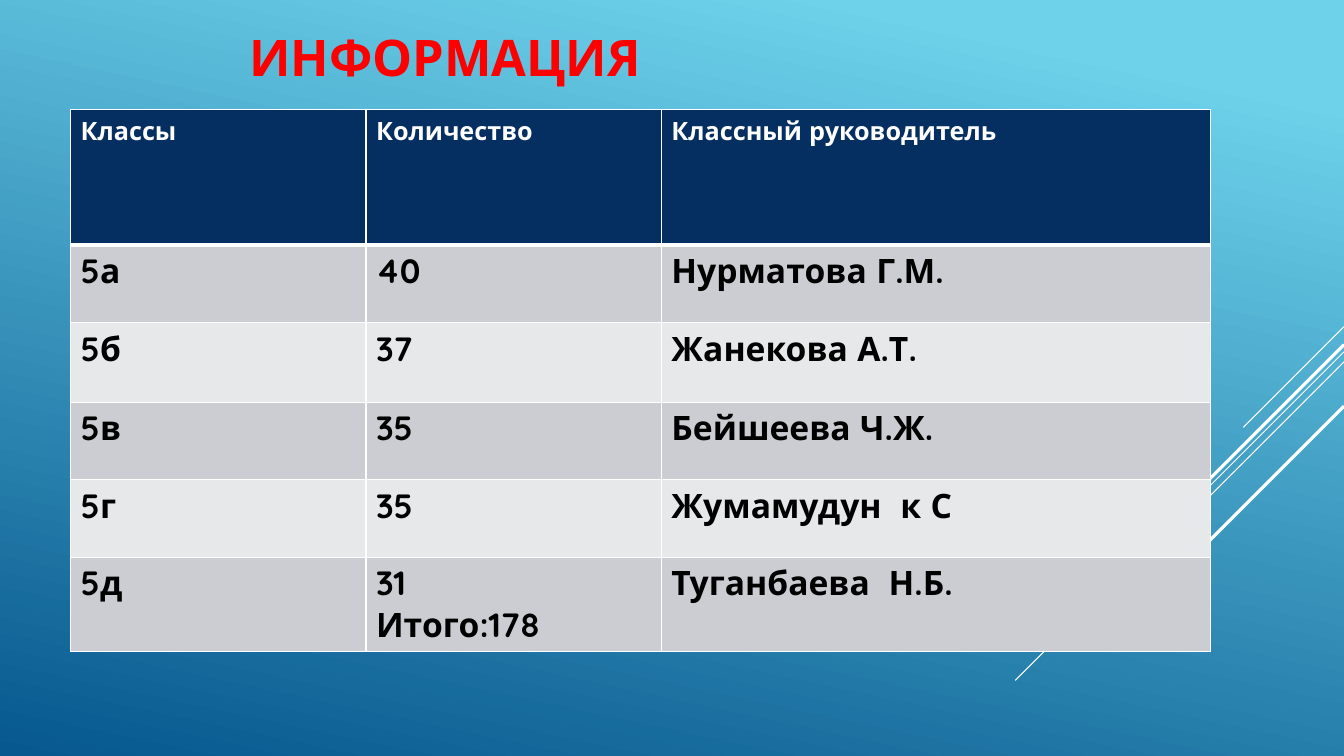
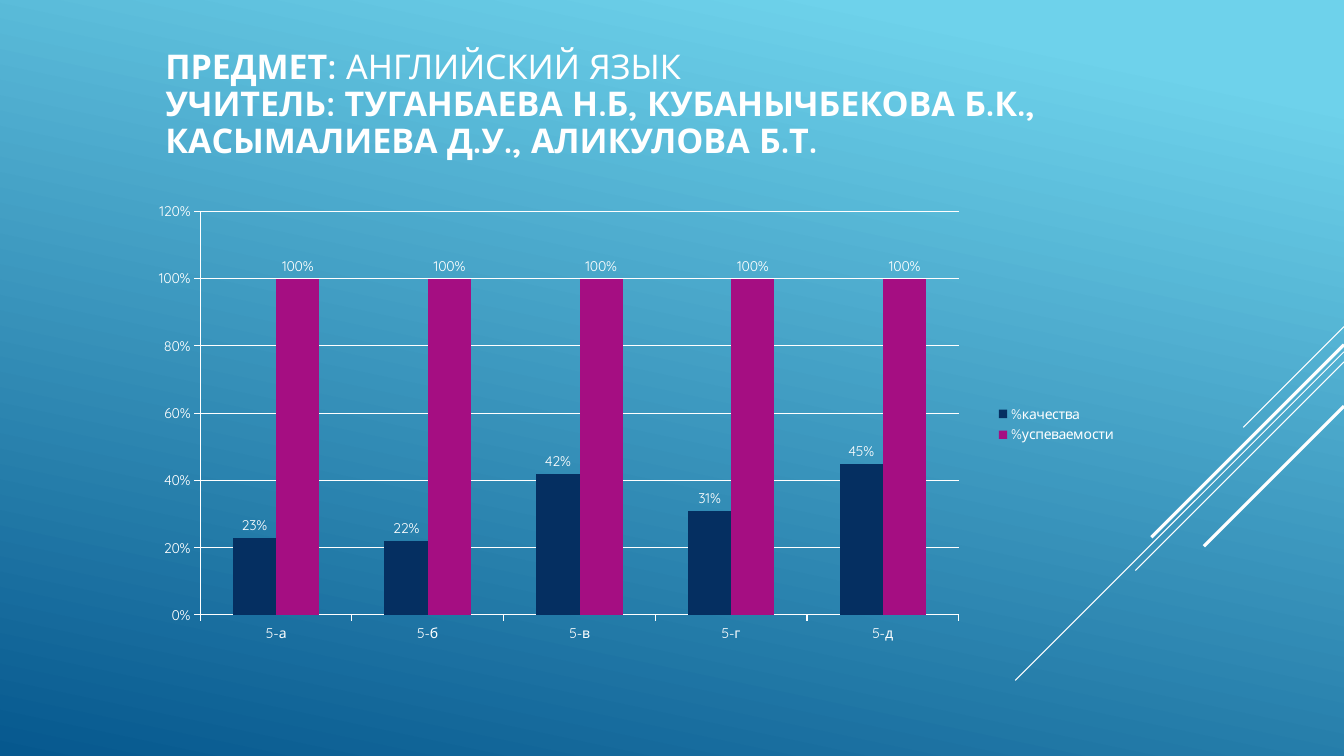
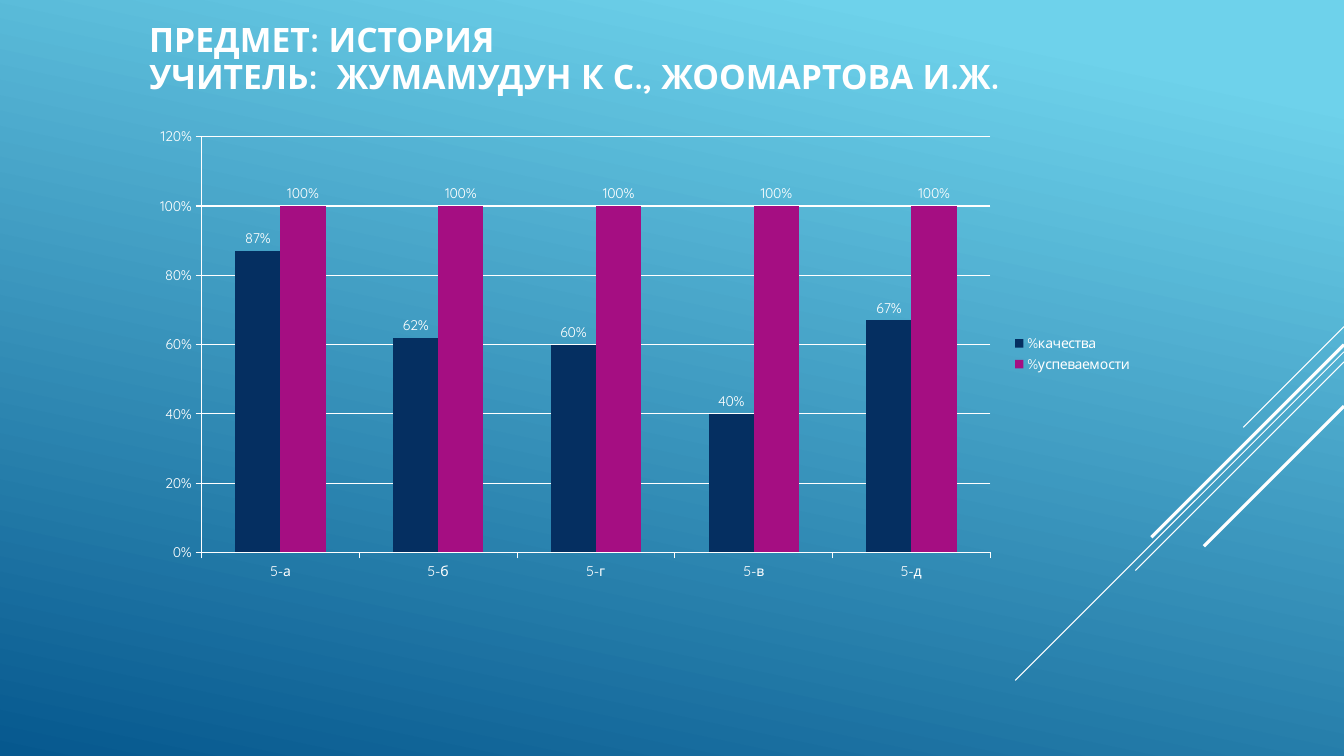
"""Build three slides on class sizes and subject results for the fifth forms."""
from dataclasses import dataclass

from lxml import etree
from pptx import Presentation
from pptx import util as u
from pptx.chart.data import CategoryChartData
from pptx.dml.color import RGBColor
from pptx.enum import chart as ch
from pptx.enum import shapes, text
from pptx.oxml.ns import qn


@dataclass(frozen=True)
class Theme:
    font: str = "Quicksand"
    white: RGBColor = RGBColor(0xFF, 0xFF, 0xFF)
    black: RGBColor = RGBColor(0, 0, 0)
    red: RGBColor = RGBColor(0xFF, 0, 0)
    navy: RGBColor = RGBColor(0x05, 0x2F, 0x61)
    magenta: RGBColor = RGBColor(0xA5, 0x0E, 0x82)
    sky: RGBColor = RGBColor(0x6E, 0xD2, 0xEB)
    ocean: RGBColor = RGBColor(0x06, 0x58, 0x8E)
    band_dark: RGBColor = RGBColor(0xCC, 0xCD, 0xD2)
    band_light: RGBColor = RGBColor(0xE7, 0xE8, 0xEA)
    heading: float = 36
    subject: float = 24
    table_head: float = 18
    table_body: float = 24
    chart: float = 10


T = Theme()


def add_run(p, words, size, color, bold=True):
    r = p.add_run()
    r.text = words
    r.font.name, r.font.size, r.font.bold = T.font, u.Pt(size), bold
    r.font.color.rgb = color


def add_titled_slide(box, lines, size, color, bottom=0.05):
    s = prs.slides.add_slide(prs.slide_layouts[5])
    sp = s.shapes.title
    sp.left, sp.top, sp.width, sp.height = map(u.Inches, box)
    tf = sp.text_frame
    tf.word_wrap, tf.auto_size = True, text.MSO_AUTO_SIZE.NONE
    tf.vertical_anchor = text.MSO_ANCHOR.MIDDLE
    tf.margin_bottom = u.Inches(bottom)
    p = tf.paragraphs[0]
    p.alignment, p.line_spacing = text.PP_ALIGN.LEFT, 0.9
    for i, line in enumerate(lines):
        if i:
            p.add_line_break()
        for words, bold in line:
            add_run(p, words, size, color, bold)
    return s


prs = Presentation()
prs.slide_width, prs.slide_height = u.Inches(13.33), u.Inches(7.5)
master = prs.slide_master

fill = master.background.fill
fill.gradient()
fill.gradient_angle = 360 - 102
for stop, position, color in zip(fill.gradient_stops, (0.1, 1), (T.sky, T.ocean)):
    stop.position, stop.color.rgb = position, color

s = add_titled_slide((2.37, -0.47, 9.91, 2.13), [[("ИНФОРМАЦИЯ", True)]], T.heading, T.red)

RIGHT = 13.33
for top, run, weight in [(3.24, 1, 0.75), (3.49, 3.26, 0.75), (3.59, 2.07, 0.75),
                         (3.42, 1.91, 2.25), (4.03, 1.39, 2.25)]:
    ray = s.shapes.add_connector(shapes.MSO_CONNECTOR.STRAIGHT, u.Inches(RIGHT), u.Inches(top),
                                 u.Inches(RIGHT - run), u.Inches(top + run))
    ray.line.color.rgb, ray.line.width = T.white, u.Pt(weight)
    etree.SubElement(ray.element.spPr, qn("a:effectLst"))
    master.element.cSld.spTree.append(ray.element)

rows = [
    ("Классы", "Количество", "Классный руководитель"),
    ("5а", "40", "Нурматова Г.М."),
    ("5б", "37", "Жанекова А.Т."),
    ("5в", "35", "Бейшеева Ч.Ж."),
    ("5г", "35", "Жумамудун  к С"),
    ("5д", "31\nИтого:178", "Туганбаева  Н.Б."),
]
table = s.shapes.add_table(len(rows), 3, u.Inches(0.7), u.Inches(1.09),
                           u.Inches(11.3), u.Inches(5.35)).table
for col, width in zip(table.columns, (2.93, 2.93, 5.45)):
    col.width = u.Inches(width)
for row, height in zip(table.rows, (1.34, 0.77, 0.79, 0.77, 0.77, 0.83)):
    row.height = u.Inches(height)
for i, row in enumerate(rows):
    if i == 0:
        size, ink, shade = T.table_head, T.white, T.navy
    else:
        size, ink, shade = T.table_body, T.black, T.band_dark if i % 2 else T.band_light
    for j, words in enumerate(row):
        cell = table.cell(i, j)
        tcPr = cell._tc.get_or_add_tcPr()
        for side in "LRTB":
            thick = (i, side) in ((0, "B"), (1, "T"))
            ln = etree.SubElement(tcPr, qn("a:ln" + side), w=str(u.Pt(3 if thick else 1)))
            solid = etree.SubElement(ln, qn("a:solidFill"))
            etree.SubElement(solid, qn("a:srgbClr"), val=str(T.white))
        cell.fill.solid()
        cell.fill.fore_color.rgb = shade
        tf = cell.text_frame
        for k, line in enumerate(words.split("\n")):
            p = tf.add_paragraph() if k else tf.paragraphs[0]
            add_run(p, line, size, ink)

subjects = [
    dict(
        title=(1.54, 0.15, 10.85, 1.79), size=24.3, bottom=0.05,
        lines=[[("ПРЕДМЕТ: ", True), ("АНГЛИЙСКИЙ ЯЗЫК", False)],
               [("УЧИТЕЛЬ: ТУГАНБАЕВА Н.Б, КУБАНЫЧБЕКОВА Б.К., "
                 "КАСЫМАЛИЕВА Д.У., АЛИКУЛОВА Б.Т.", True)]],
        chart=(1.4, 2.01, 9.77, 4.4), plot=(0.06, 0.02, 0.77, 0.91),
        quality={"5-а": 0.23, "5-б": 0.22, "5-в": 0.42, "5-г": 0.31, "5-д": 0.45},
    ),
    dict(
        title=(1.38, 0.22, 11.59, 1.17), size=T.subject, bottom=0.47,
        lines=[[("ПРЕДМЕТ: ИСТОРИЯ", True)],
               [("УЧИТЕЛЬ:  ЖУМАМУДУН К С., ЖООМАРТОВА И.Ж.", True)]],
        chart=(1.39, 1.18, 9.94, 4.66), plot=None,
        quality={"5-а": 0.87, "5-б": 0.62, "5-г": 0.6, "5-в": 0.4, "5-д": 0.67},
    ),
]
for subject in subjects:
    s = add_titled_slide(subject["title"], subject["lines"], subject["size"], T.white,
                         subject["bottom"])
    quality = subject["quality"]
    data = CategoryChartData(number_format="0%")
    data.categories = list(quality)
    data.add_series("%качества", list(quality.values()))
    data.add_series("%успеваемости", [1] * len(quality))
    chart = s.shapes.add_chart(ch.XL_CHART_TYPE.COLUMN_CLUSTERED,
                               *map(u.Inches, subject["chart"]), data).chart
    chart.has_title = False
    chart.font.name, chart.font.size = T.font, u.Pt(T.chart)
    chart.font.color.rgb = T.white
    chart.has_legend = True
    chart.legend.position = ch.XL_LEGEND_POSITION.RIGHT
    chart.legend.include_in_layout = False

    values = chart.value_axis
    values.minimum_scale, values.maximum_scale, values.major_unit = 0, 1.2, 0.2
    values.has_major_gridlines = True
    values.tick_labels.number_format = "0%"
    values.tick_labels.number_format_is_linked = False
    for axis in (values, chart.category_axis):
        axis.major_tick_mark = ch.XL_TICK_MARK.OUTSIDE
    for lined in (values, chart.category_axis, values.major_gridlines):
        lined.format.line.color.rgb = T.white
        lined.format.line.width = u.Pt(0.75)

    plot = chart.plots[0]
    plot.gap_width, plot.overlap, plot.vary_by_categories = 150, 0, False
    plot.has_data_labels = True
    labels = plot.data_labels
    labels.show_value = True
    labels.number_format, labels.number_format_is_linked = "0%", False
    labels.position = ch.XL_LABEL_POSITION.OUTSIDE_END
    for series, color in zip(plot.series, (T.navy, T.magenta)):
        series.format.fill.solid()
        series.format.fill.fore_color.rgb = color

    if subject["plot"]:
        area = chart.element.find(".//" + qn("c:plotArea"))
        layout = area.find(qn("c:layout"))
        if layout is None:
            layout = etree.Element(qn("c:layout"))
            area.insert(0, layout)
        manual = etree.SubElement(layout, qn("c:manualLayout"))
        for tag, val in zip(("layoutTarget", "xMode", "yMode", "x", "y", "w", "h"),
                            ("inner", "edge", "edge", *subject["plot"])):
            etree.SubElement(manual, qn("c:" + tag), val=str(val))

prs.save("out.pptx")
